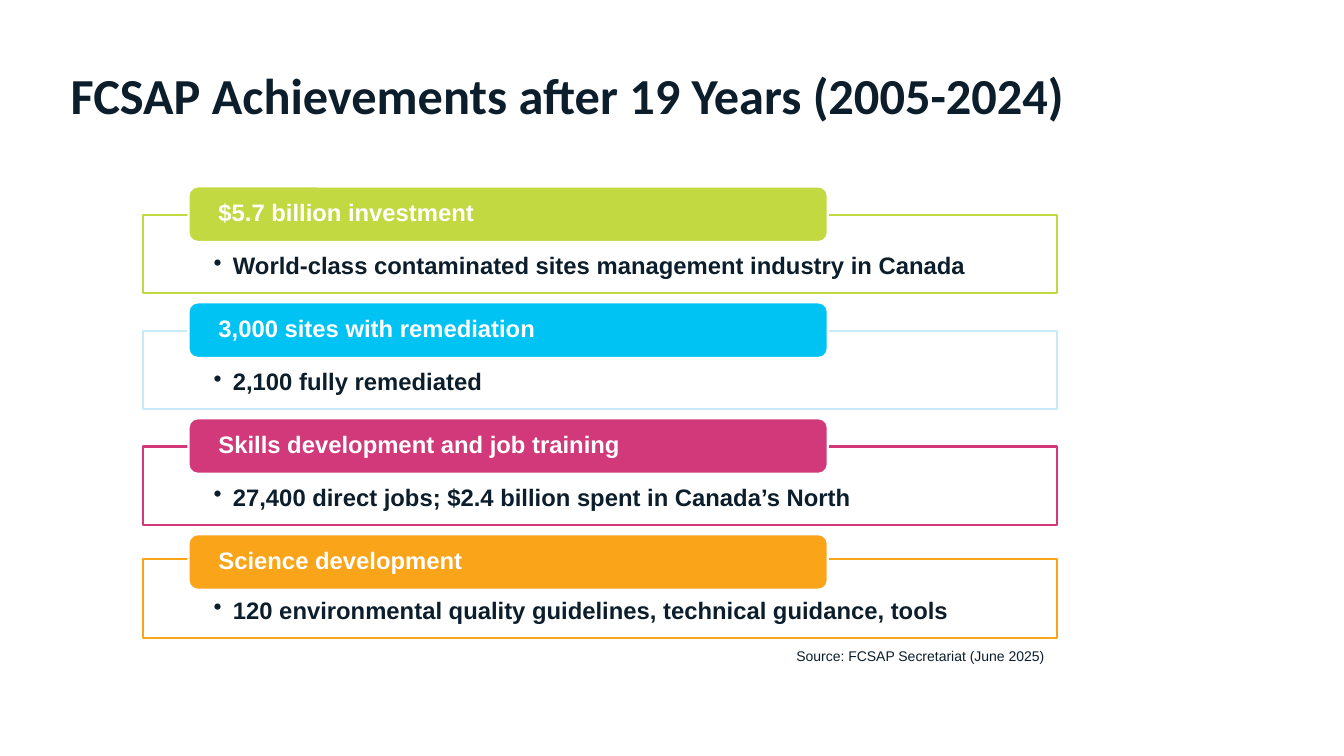
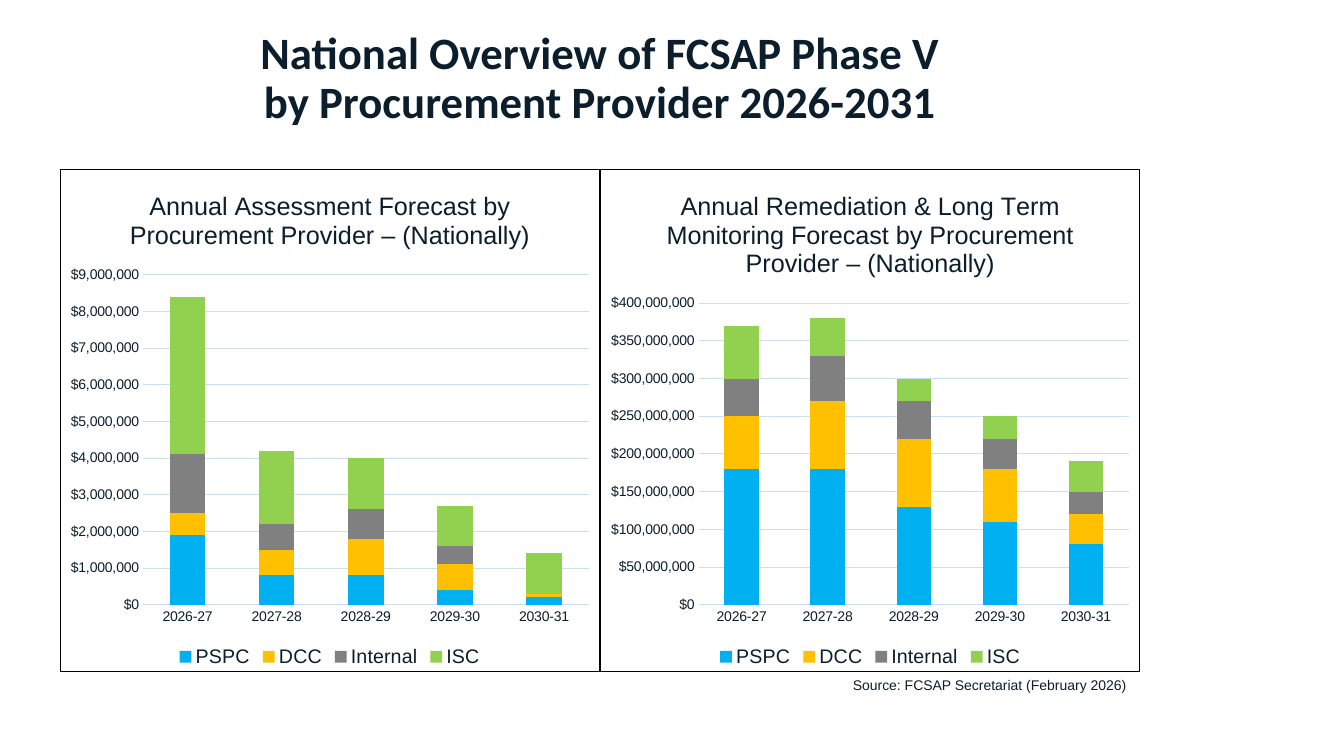
from pptx import Presentation
from pptx.chart.data import CategoryChartData
from pptx.dml.color import RGBColor
from pptx.enum.chart import XL_CHART_TYPE, XL_LEGEND_POSITION, XL_TICK_MARK
from pptx.enum.shapes import MSO_SHAPE
from pptx.enum.text import MSO_ANCHOR, MSO_AUTO_SIZE, PP_ALIGN
from pptx.oxml import parse_xml
from pptx.oxml.ns import nsdecls, qn
from pptx.util import Inches, Pt

INK, WHITE, GRID = "0C1E2B", "FFFFFF", "CAE0F0"
DOLLARS = r"\$#,##0"

PAGES = [
    # title lines, title top, size, alignment, source, source left and top
    (["FCSAP Achievements after 19 Years (2005-2024)"], 0.7, 36, PP_ALIGN.LEFT,
     "Source: FCSAP Secretariat (June 2025)", 7.8, 6.37, 2.68),
    (["National Overview of FCSAP Phase V", "by Procurement Provider 2026-2031"],
     0.31, 32, PP_ALIGN.CENTER,
     "Source: FCSAP Secretariat (February 2026)", 8.36, 6.66, 2.94),
]

ACHIEVEMENTS = [
    # heading, detail, heading colour, frame colour, frame top
    ("$5.7 billion investment",
     "World-class contaminated sites management industry in Canada",
     "C3D941", "C3D941", 2.13),
    ("3,000 sites with remediation", "2,100 fully remediated",
     "00C2F3", "C7EAFB", 3.28),
    ("Skills development and job training",
     "27,400 direct jobs; $2.4 billion spent in Canada’s North",
     "D1397A", "D1397A", 4.43),
    ("Science development",
     "120 environmental quality guidelines, technical guidance, tools",
     "FAA41A", "FAA41A", 5.55),
]

YEARS = ["2026-27", "2027-28", "2028-29", "2029-30", "2030-31"]
PROVIDERS = [("PSPC", "00B0F0"), ("DCC", "FFC000"),
             ("Internal", "808080"), ("ISC", "92D050")]
MILLION = 1_000_000
FORECASTS = [
    # title, axis maximum, axis step, millions of dollars by provider
    ("Annual Assessment Forecast by Procurement Provider – (Nationally)", 9, 1,
     [[1.9, 0.8, 0.8, 0.4, 0.2], [0.6, 0.7, 1, 0.7, 0.1],
      [1.6, 0.7, 0.8, 0.5, 0], [4.3, 2, 1.4, 1.1, 1.1]]),
    ("Annual Remediation & Long Term Monitoring Forecast by Procurement "
     "Provider – (Nationally)", 400, 50,
     [[180, 180, 130, 110, 80], [70, 90, 90, 70, 40],
      [50, 60, 50, 40, 30], [70, 50, 30, 30, 40]]),
]


def color(value):
    return RGBColor.from_string(value)


def add_span(para, text, size, ink=INK, bold=False, face="Arial"):
    span = para.add_run()
    span.text = text
    span.font.size, span.font.bold, span.font.name = Pt(size), bold, face
    span.font.color.rgb = color(ink)


deck = Presentation()
deck.slide_width, deck.slide_height = Inches(13.33), Inches(7.5)

pages = []
for lines, top, size, alignment, source, left, source_top, width in PAGES:
    page = deck.slides.add_slide(deck.slide_layouts[5])
    pages.append(page)
    title = page.shapes.title
    title.left, title.top = Inches(0.7), Inches(top)
    title.width, title.height = Inches(10.5), Inches(1.24)
    frame = title.text_frame
    frame.margin_left = frame.margin_right = 0
    frame.margin_top = frame.margin_bottom = 0
    frame.vertical_anchor = MSO_ANCHOR.TOP
    frame.auto_size = MSO_AUTO_SIZE.NONE
    para = frame.paragraphs[0]
    para.alignment, para.line_spacing = alignment, 0.9
    for number, line in enumerate(lines):
        if number:
            para.add_line_break()
        add_span(para, line, size, bold=True, face="Calibri")

    source_box = page.shapes.add_textbox(
        Inches(left), Inches(source_top), Inches(width), Inches(0.27))
    source_box.text_frame.word_wrap = False
    source_box.text_frame.auto_size = MSO_AUTO_SIZE.SHAPE_TO_FIT_TEXT
    add_span(source_box.text_frame.paragraphs[0], source, 10)

achievements_page, forecast_page = pages

for row, (heading, detail, fill, outline, frame_top) in enumerate(ACHIEVEMENTS):
    detail_box = achievements_page.shapes.add_shape(
        MSO_SHAPE.RECTANGLE, Inches(1.42), Inches(frame_top),
        Inches(9.06), Inches(0.78))
    heading_box = achievements_page.shapes.add_shape(
        MSO_SHAPE.ROUNDED_RECTANGLE, Inches(1.87), Inches(1.85 + 1.15 * row),
        Inches(6.34), Inches(0.55))
    for box, text, back, line, ink, anchor, margins in (
        (detail_box, detail, WHITE, outline, INK, MSO_ANCHOR.TOP, (0.7, 0.39, 0.13)),
        (heading_box, heading, fill, WHITE, WHITE, MSO_ANCHOR.MIDDLE, (0.27, 0, 0)),
    ):
        box.shadow.inherit = False
        box.fill.solid()
        box.fill.fore_color.rgb = color(back)
        box.line.color.rgb = color(line)
        box.line.width = Pt(1.5)
        frame = box.text_frame
        frame.word_wrap = True
        frame.vertical_anchor = anchor
        side, above, below = margins
        frame.margin_left = frame.margin_right = Inches(side)
        frame.margin_top, frame.margin_bottom = Inches(above), Inches(below)
        para = frame.paragraphs[0]
        para.alignment, para.line_spacing = PP_ALIGN.LEFT, 0.9
        if box is detail_box:
            properties = para._p.get_or_add_pPr()
            properties.set("marL", str(Inches(0.19)))
            properties.set("indent", str(-Inches(0.19)))
            properties.append(parse_xml(f'<a:buChar {nsdecls("a")} char="•"/>'))
        add_span(para, text, 17, ink, bold=True)

for column, (heading, maximum, step, amounts) in enumerate(FORECASTS):
    data = CategoryChartData(number_format=DOLLARS)
    data.categories = YEARS
    for (provider, _), values in zip(PROVIDERS, amounts):
        data.add_series(provider, [round(value * MILLION) for value in values])
    chart = forecast_page.shapes.add_chart(
        XL_CHART_TYPE.COLUMN_STACKED, Inches(0.59 + 5.36 * column), Inches(1.68),
        Inches(5.36), Inches(4.99), data).chart
    chart.font.size, chart.font.name = Pt(10), "Arial"
    chart.font.color.rgb = color(INK)
    chart.element.find(qn("c:chart")).addnext(parse_xml(
        f'<c:spPr {nsdecls("c", "a")}><a:noFill/><a:ln w="{Pt(0.75)}"><a:solidFill>'
        '<a:srgbClr val="000000"/></a:solidFill></a:ln></c:spPr>'))

    chart.has_title = True
    add_span(chart.chart_title.text_frame.paragraphs[0], heading, 18)
    chart.has_legend = True
    chart.legend.position = XL_LEGEND_POSITION.BOTTOM
    chart.legend.include_in_layout = False
    chart.legend.font.size, chart.legend.font.name = Pt(14), "Arial"
    chart.legend.font.color.rgb = color(INK)

    plot = chart.plots[0]
    plot.gap_width, plot.overlap, plot.vary_by_categories = 150, 100, False
    for series, (_, fill) in zip(plot.series, PROVIDERS):
        series.format.fill.solid()
        series.format.fill.fore_color.rgb = color(fill)

    years_axis, dollars_axis = chart.category_axis, chart.value_axis
    years_axis.major_tick_mark = dollars_axis.major_tick_mark = XL_TICK_MARK.NONE
    dollars_axis.minimum_scale = 0
    dollars_axis.maximum_scale = maximum * MILLION
    dollars_axis.major_unit = step * MILLION
    dollars_axis.tick_labels.number_format = DOLLARS
    dollars_axis.tick_labels.number_format_is_linked = False
    dollars_axis.format.line.fill.background()
    for line in (years_axis.format.line, dollars_axis.major_gridlines.format.line):
        line.color.rgb = color(GRID)
        line.width = Pt(0.75)

deck.save("out.pptx")
